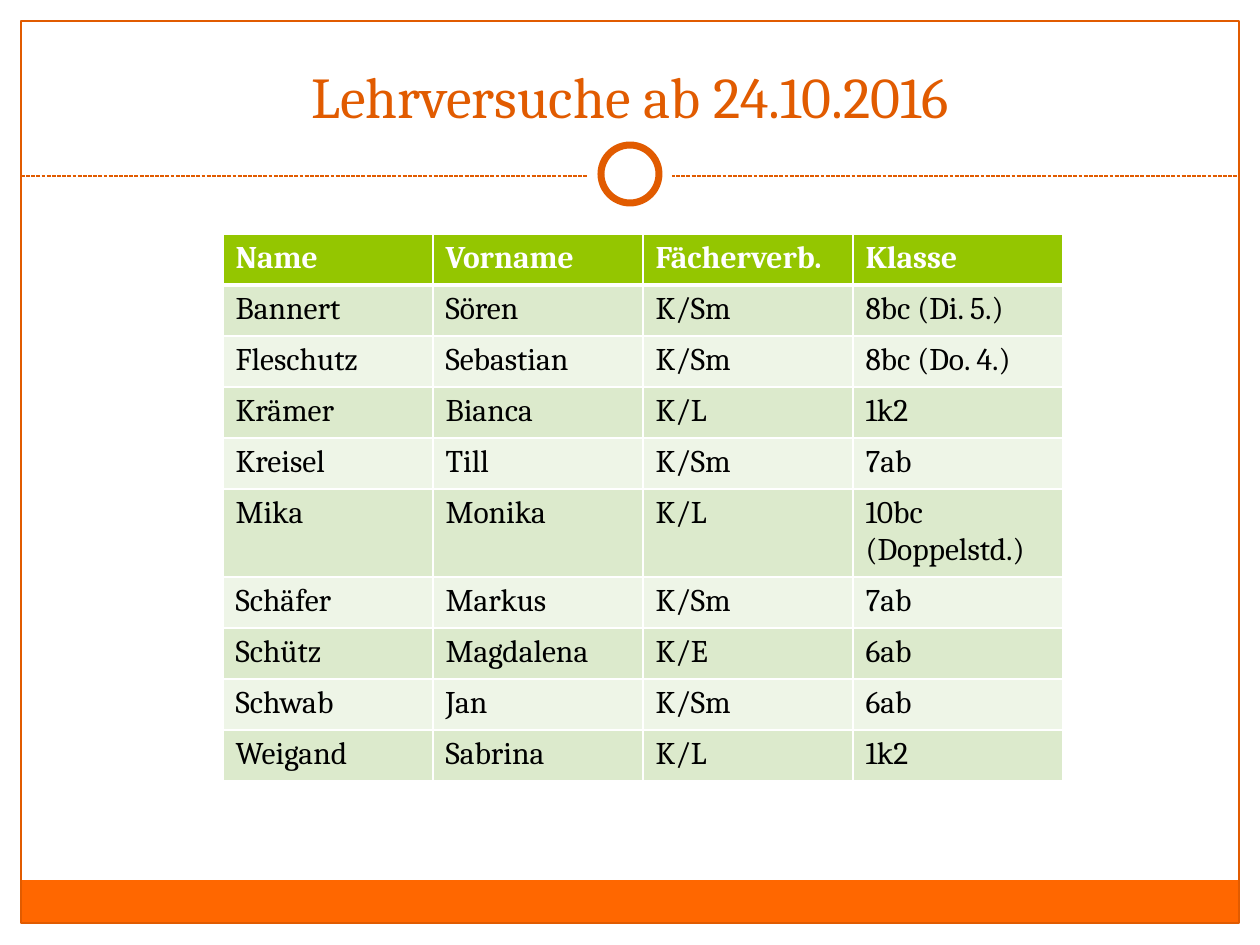
from lxml import etree
from pptx import Presentation
from pptx import util as u
from pptx.dml.color import RGBColor
from pptx.enum import dml, shapes, text
from pptx.oxml.ns import qn

SCALE = 914400 / 126  # EMU per px
FONT = "Cambria"
COLORS = {
    "white": "FFFFFF", "black": "000000", "accent": "E15B00",
    "footer": "FF6700", "header": "94C600",
    "band_dark": "DCEACC", "band_light": "EEF5E7",
}
TITLE = "Lehrversuche ab 24.10.2016"
ROWS = [
    ("Name", "Vorname", "Fächerverb.", "Klasse"),
    ("Bannert", "Sören", "K/Sm", "8bc (Di. 5.)"),
    ("Fleschutz", "Sebastian", "K/Sm", "8bc (Do. 4.)"),
    ("Krämer", "Bianca", "K/L", "1k2"),
    ("Kreisel", "Till", "K/Sm", "7ab"),
    ("Mika", "Monika", "K/L", "10bc (Doppelstd.)"),
    ("Schäfer", "Markus", "K/Sm", "7ab"),
    ("Schütz", "Magdalena", "K/E", "6ab"),
    ("Schwab", "Jan", "K/Sm", "6ab"),
    ("Weigand", "Sabrina", "K/L", "1k2"),
]


def px(n):
    return u.Emu(round(n * SCALE))


def rgb(name):
    return RGBColor.from_string(COLORS[name])


def add_shape(s, kind, box, fill=None, line=None, width=0.75):
    sp = s.shapes.add_shape(kind, *map(px, box))
    sp.shadow.inherit = False
    if fill:
        sp.fill.solid()
        sp.fill.fore_color.rgb = rgb(fill)
    else:
        sp.fill.background()
    if line:
        sp.line.color.rgb = rgb(line)
        sp.line.width = u.Pt(width)
    else:
        sp.line.fill.background()
    return sp


def write(tf, value, **font):
    p = tf.paragraphs[0]
    r = p.add_run()
    r.text = value
    color = font.pop("color")
    for key, val in {"name": FONT, **font}.items():
        setattr(r.font, key, val)
    r.font.color.rgb = rgb(color)
    return p


def add_frame(s, box):
    """Border with a footer bar along its bottom edge."""
    x, y, w, h = box
    rect = shapes.MSO_SHAPE.RECTANGLE
    add_shape(s, rect, (x, y + h - 43, w, 43), fill="footer")
    add_shape(s, rect, box, line="accent")


def add_divider(s, box):
    """Dashed line interrupted by a ring at its centre."""
    x, y, w, h = box
    line_y = y + h // 2 + 2
    cxn = s.shapes.add_connector(shapes.MSO_CONNECTOR.STRAIGHT,
                                 px(x), px(line_y), px(x + w), px(line_y))
    cxn.line.color.rgb = rgb("accent")
    cxn.line.width = u.Pt(0.75)
    cxn.line.dash_style = dml.MSO_LINE.SQUARE_DOT
    etree.SubElement(cxn._element.spPr, qn("a:effectLst"))
    for size, line in ((h, None), (58, "accent")):
        ring = (x + (w - size) // 2, y + (h - size) // 2, size, size)
        add_shape(s, shapes.MSO_SHAPE.OVAL, ring, "white", line, 4)


def add_title(s, box):
    tf = s.shapes.add_textbox(*map(px, box)).text_frame
    tf.word_wrap = True
    tf.vertical_anchor = text.MSO_ANCHOR.BOTTOM
    p = write(tf, TITLE, size=u.Pt(33), color="accent")
    p.alignment = text.PP_ALIGN.CENTER


def set_borders(cell, widths):
    """Draw white cell borders; widths maps sides L, R, T, B to points."""
    tcPr = cell._tc.get_or_add_tcPr()
    for i, (side, width) in enumerate(widths.items()):
        ln = etree.Element(qn(f"a:ln{side}"), w=str(u.Pt(width)))
        fill = etree.SubElement(ln, qn("a:solidFill"))
        etree.SubElement(fill, qn("a:srgbClr"), val=COLORS["white"])
        tcPr.insert(i, ln)


def add_schedule(s, box):
    """Table of trainees with a header row and banded body rows."""
    tbl = s.shapes.add_table(len(ROWS), len(ROWS[0]), *map(px, box)).table
    for i, row in enumerate(ROWS):
        head = i == 0
        fill = "header" if head else "band_dark" if i % 2 else "band_light"
        borders = {"L": 1, "R": 1, "T": 3 if i == 1 else 1, "B": 3 if head else 1}
        for j, value in enumerate(row):
            cell = tbl.cell(i, j)
            cell.fill.solid()
            cell.fill.fore_color.rgb = rgb(fill)
            set_borders(cell, borders)
            write(cell.text_frame, value, size=u.Pt(18), bold=head,
                  color="white" if head else "black")


def main():
    prs = Presentation()
    prs.slide_width, prs.slide_height = px(1260), px(945)
    s = prs.slides.add_slide(prs.slide_layouts[6])
    add_frame(s, (21, 21, 1218, 902))
    add_divider(s, (21, 132, 1218, 84))
    add_title(s, (42, 32, 1176, 104))
    add_schedule(s, (223, 234, 840, 510))
    prs.save("out.pptx")


if __name__ == "__main__":
    main()
